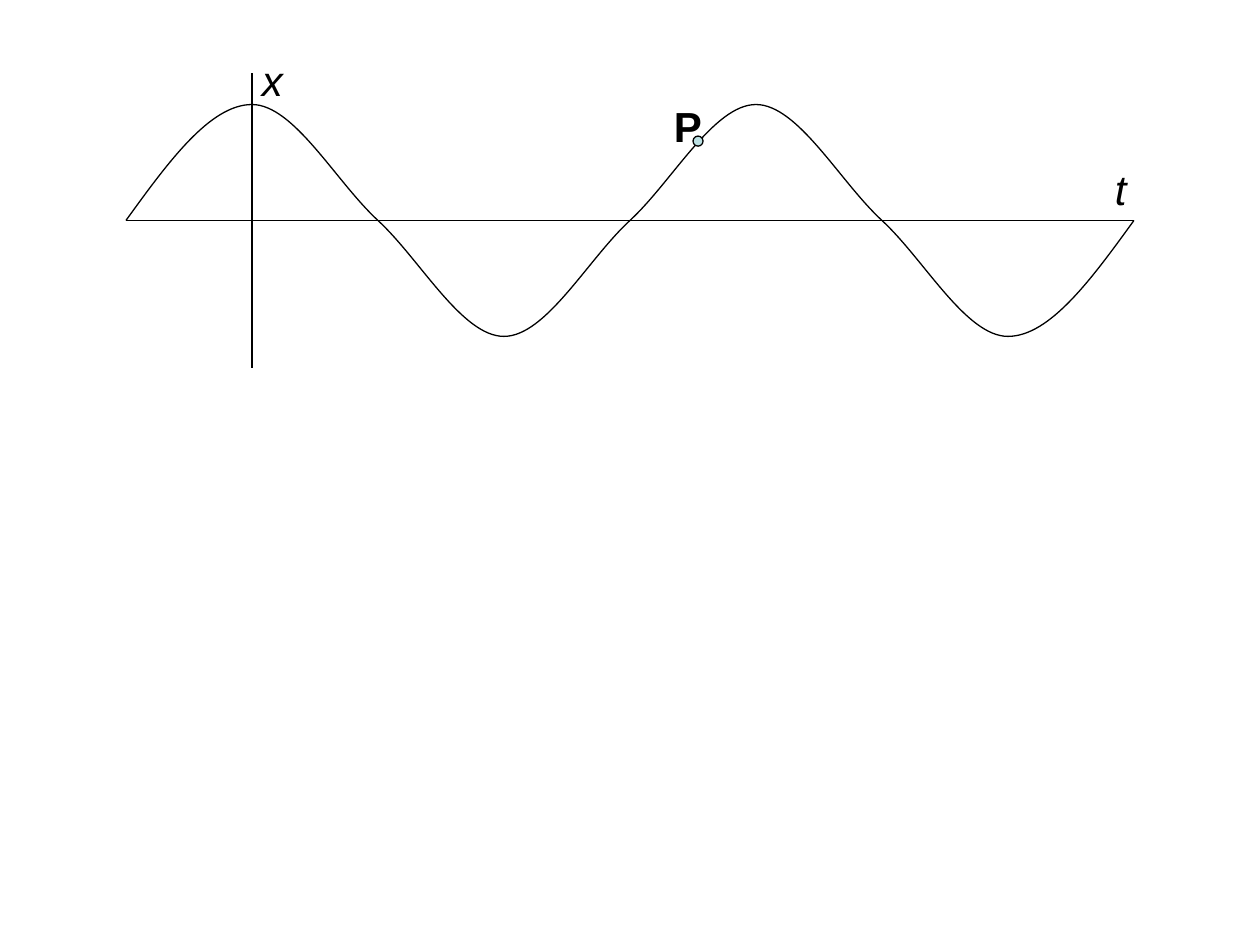
from dataclasses import dataclass
from lxml.etree import SubElement
from pptx import Presentation
from pptx.dml.color import RGBColor as RGB
from pptx.enum.shapes import MSO_CONNECTOR as Conn, MSO_SHAPE as Form
from pptx.enum.text import MSO_AUTO_SIZE as Auto
from pptx.oxml.ns import qn
from pptx.util import Inches, Pt


@dataclass(frozen=True)
class Theme:
    ink: RGB = RGB(0, 0, 0)
    dot: RGB = RGB(0xBB, 0xE0, 0xE3)
    font: str = "Arial"
    size: float = 24
    line: float = 0.75


class Pen:
    def __init__(self, slide, theme):
        self.slide = slide
        self.theme = theme

    def ink(self, line):
        line.color.rgb = self.theme.ink
        line.width = Pt(self.theme.line)

    def axis(self, *ends):
        line = self.slide.shapes.add_connector(Conn.STRAIGHT, *map(Inches, ends))
        self.ink(line.line)
        SubElement(line._element.spPr, qn("a:effectLst"))

    def curve(self, points):
        first, *rest = [(Inches(x), Inches(y)) for x, y in points]
        maker = self.slide.shapes.build_freeform(*first)
        maker.add_line_segments(rest, close=False)
        wave = maker.convert_to_shape()
        legs = list(wave._element.iter(qn("a:lnTo")))
        track = legs[0].getparent()
        for i in range(0, len(legs), 3):
            bend = SubElement(track, qn("a:cubicBezTo"))
            for leg in legs[i:i + 3]:
                bend.append(leg[0])
                track.remove(leg)
        wave.shadow.inherit = False
        wave.fill.background()
        self.ink(wave.line)

    def dot(self, left, top, size):
        box = map(Inches, (left, top, size, size))
        dot = self.slide.shapes.add_shape(Form.OVAL, *box)
        dot.shadow.inherit = False
        dot.fill.solid()
        dot.fill.fore_color.rgb = self.theme.dot
        self.ink(dot.line)

    def label(self, text, left, top, width, height, **style):
        box = map(Inches, (left, top, width, height))
        frame = self.slide.shapes.add_textbox(*box).text_frame
        frame.word_wrap = False
        frame.auto_size = Auto.SHAPE_TO_FIT_TEXT
        run = frame.paragraphs[0].add_run()
        run.text = text
        look = {"name": self.theme.font, "size": Pt(self.theme.size), **style}
        for key, value in look.items():
            setattr(run.font, key, value)
        run.font.color.rgb = self.theme.ink


def wave(left, mid, high, count):
    level = [(0, 1, 0, -1)[i % 4] for i in range(count + 1)]
    slope = [(1, 0, -1, 0)[i % 4] / 3 for i in range(count + 1)]
    slope[0] *= 1.5
    slope[-1] *= 1.5
    yield left, mid
    for i in range(count):
        rises = level[i] + slope[i], level[i + 1] - slope[i + 1], level[i + 1]
        for n, rise in enumerate(rises, 1):
            yield left + i + n / 3, mid - high * rise


def main():
    deck = Presentation()
    deck.slide_width, deck.slide_height = Inches(10), Inches(7.5)
    pen = Pen(deck.slides.add_slide(deck.slide_layouts[6]), Theme())
    left, mid, count = 1, 1.75, 8
    pen.axis(2, 0.58, 2, 2.92)
    pen.axis(left, mid, left + count, mid)
    pen.curve(wave(left, mid, 0.92, count))
    pen.dot(5.5, 1.08, 0.08)
    pen.label("x", 1.98, 0.38, 0.37, 0.5, italic=True)
    pen.label("t", 8.75, 1.25, 0.29, 0.5, italic=True)
    pen.label("P", 5.25, 0.75, 0.42, 0.5, bold=True)
    deck.save("out.pptx")


if __name__ == "__main__":
    main()
